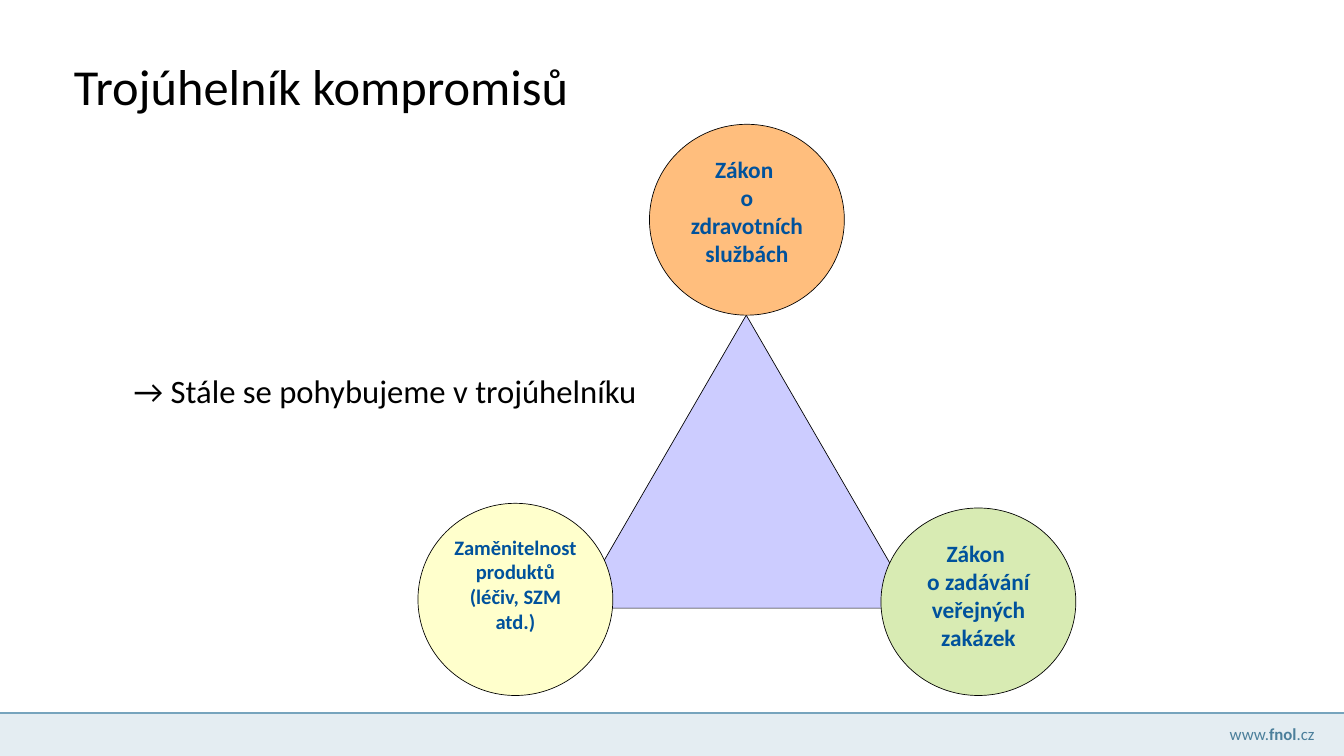
from dataclasses import dataclass

from pptx import Presentation
from pptx.dml.color import RGBColor
from pptx.enum.shapes import MSO_CONNECTOR, MSO_SHAPE
from pptx.enum.text import MSO_ANCHOR, PP_ALIGN
from pptx.oxml.ns import qn
from pptx.util import Inches, Pt

LEFT, CENTER, RIGHT = PP_ALIGN.LEFT, PP_ALIGN.CENTER, PP_ALIGN.RIGHT
TOP, MIDDLE = MSO_ANCHOR.TOP, MSO_ANCHOR.MIDDLE
RECTANGLE, OVAL = MSO_SHAPE.RECTANGLE, MSO_SHAPE.OVAL
TRIANGLE = MSO_SHAPE.ISOSCELES_TRIANGLE
STRAIGHT = MSO_CONNECTOR.STRAIGHT


@dataclass(frozen=True)
class Theme:
    font: str = "Calibri"
    ink: str = "000000"
    label: str = "00529C"
    footer_band: str = "E4EDF2"
    footer_rule: str = "76A4BD"
    footer_text: str = "4B7F9B"
    triangle: str = "CCCCFF"
    yellow: str = "FFFFCC"
    orange: str = "FFBE7D"
    green: str = "D8EBB3"
    title_size: float = 54
    statement_size: float = 35
    label_size: float = 25
    small_label_size: float = 22
    footer_size: float = 18
    outline: float = 0.75
    rule: float = 1.5


THEME = Theme()


def style_paragraph(para, size, color, align=LEFT, bold=False):
    para.alignment = align
    para.font.name = THEME.font
    para.font.size = Pt(size)
    para.font.bold = bold
    para.font.color.rgb = RGBColor.from_string(color)


def add_filled_shape(page, kind, box, fill, outlined=True):
    shape = page.shapes.add_shape(kind, *map(Inches, box))
    shape.shadow.inherit = False
    shape.fill.solid()
    shape.fill.fore_color.rgb = RGBColor.from_string(fill)
    if outlined:
        shape.line.color.rgb = RGBColor.from_string(THEME.ink)
        shape.line.width = Pt(THEME.outline)
    else:
        shape.line.fill.background()
    return shape


def add_title(page, box, text):
    title = page.shapes.title
    title.left, title.top, title.width, title.height = map(Inches, box)
    title.text_frame.vertical_anchor = MIDDLE
    title.text_frame.text = text
    para = title.text_frame.paragraphs[0]
    para.line_spacing = 0.9
    style_paragraph(para, THEME.title_size, THEME.ink)


def add_footer(page, box):
    left, top, width, height = box
    add_filled_shape(page, RECTANGLE, box, THEME.footer_band, outlined=False)

    # Web address, right-aligned in the band
    address = page.shapes.add_textbox(
        Inches(left + width - 2.67), Inches(top + 0.11), Inches(2.33), Inches(0.4))
    address.text_frame.word_wrap = True
    para = address.text_frame.paragraphs[0]
    style_paragraph(para, THEME.footer_size, THEME.footer_text, RIGHT)
    for text, bold in (("www.", False), ("fnol", True), (".cz", False)):
        span = para.add_run()
        span.text = text
        span.font.bold = bold

    # Rule along the top edge
    rule = page.shapes.add_connector(
        STRAIGHT, Inches(left), Inches(top), Inches(left + width), Inches(top))
    rule.line.color.rgb = RGBColor.from_string(THEME.footer_rule)
    rule.line.width = Pt(THEME.rule)
    properties = rule._element.spPr
    properties.append(properties.makeelement(qn("a:effectLst"), {}))


def add_circle(page, box, fill, lines, size):
    circle = add_filled_shape(page, OVAL, box, fill)
    frame = circle.text_frame
    frame.word_wrap = True
    frame.vertical_anchor = TOP
    frame.text = "\n".join(lines)
    for para in frame.paragraphs:
        style_paragraph(para, size, THEME.label, CENTER, bold=True)


def add_compromise_triangle(page, box):
    left, top, width, height = box
    diameter = 2.9
    step = (width - diameter) / 2
    bottom = top + height

    # Triangle, its apex touching the upper circle
    add_filled_shape(
        page, TRIANGLE, (left + 2.36, top + 2.84, 5.05, 4.36), THEME.triangle)

    # Circles: column, top, height, fill, lines, type size
    circles = (
        (0, bottom - 2.86, 2.86, THEME.yellow,
         ["Zaměnitelnost produktů (léčiv, SZM atd.)"], THEME.small_label_size),
        (1, top, 2.84, THEME.orange,
         ["Zákon ", "o zdravotních", "službách"], THEME.label_size),
        (2, bottom - 2.79, 2.79, THEME.green,
         ["Zákon ", "o zadávání veřejných", "zakázek"], THEME.label_size),
    )
    for column, y, tall, fill, lines, size in circles:
        add_circle(page, (left + column * step, y, diameter, tall), fill, lines, size)


def add_statement(page, box, text):
    statement = page.shapes.add_textbox(*map(Inches, box))
    statement.text_frame.word_wrap = False
    statement.text_frame.text = text
    style_paragraph(
        statement.text_frame.paragraphs[0], THEME.statement_size, THEME.ink)


def main():
    deck = Presentation()
    deck.slide_width, deck.slide_height = Inches(20), Inches(11.25)
    page = deck.slides.add_slide(deck.slide_layouts[5])

    add_title(page, (1, 0.83, 18.21, 1), "Trojúhelník kompromisů")
    add_footer(page, (0, 10.61, 20, 0.64))
    add_compromise_triangle(page, (6.22, 1.85, 9.79, 8.5))
    add_statement(page, (1.89, 5.47, 7.75, 0.69),
                  "→ Stále se pohybujeme v trojúhelníku")
    deck.save("out.pptx")


if __name__ == "__main__":
    main()
